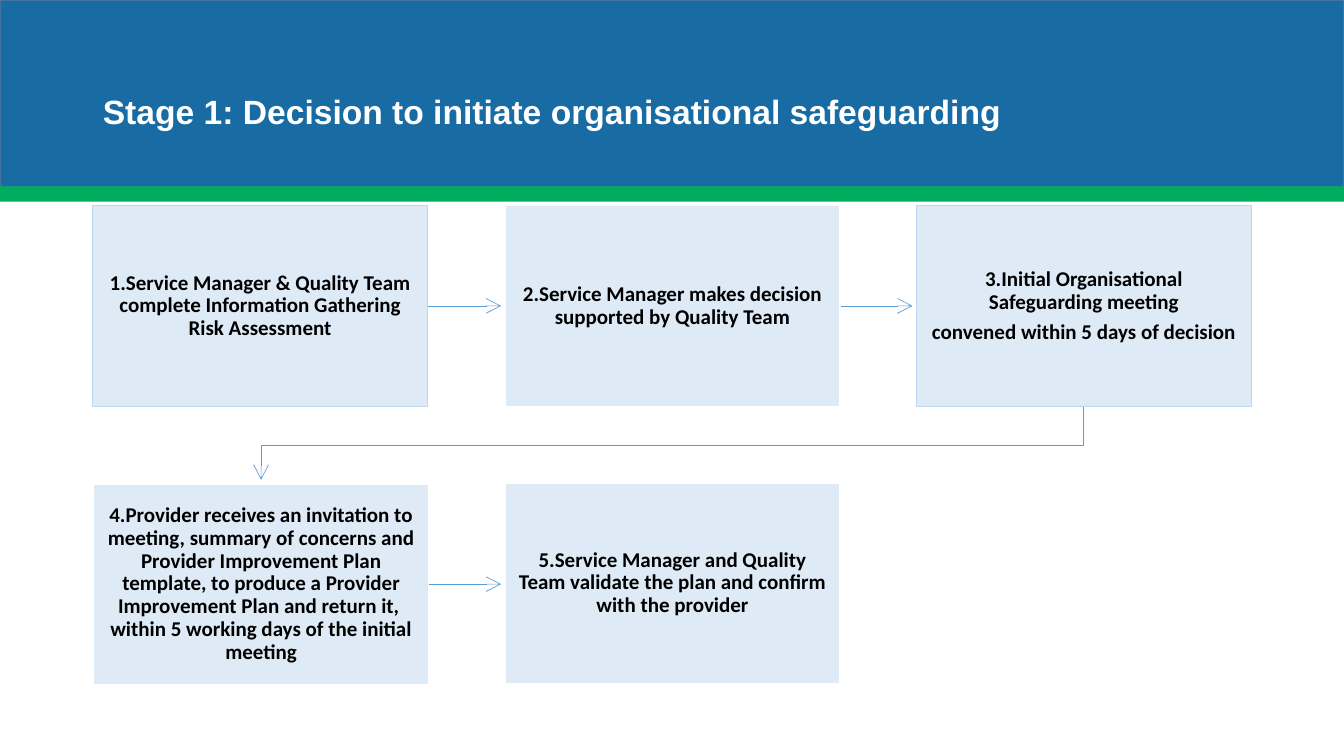
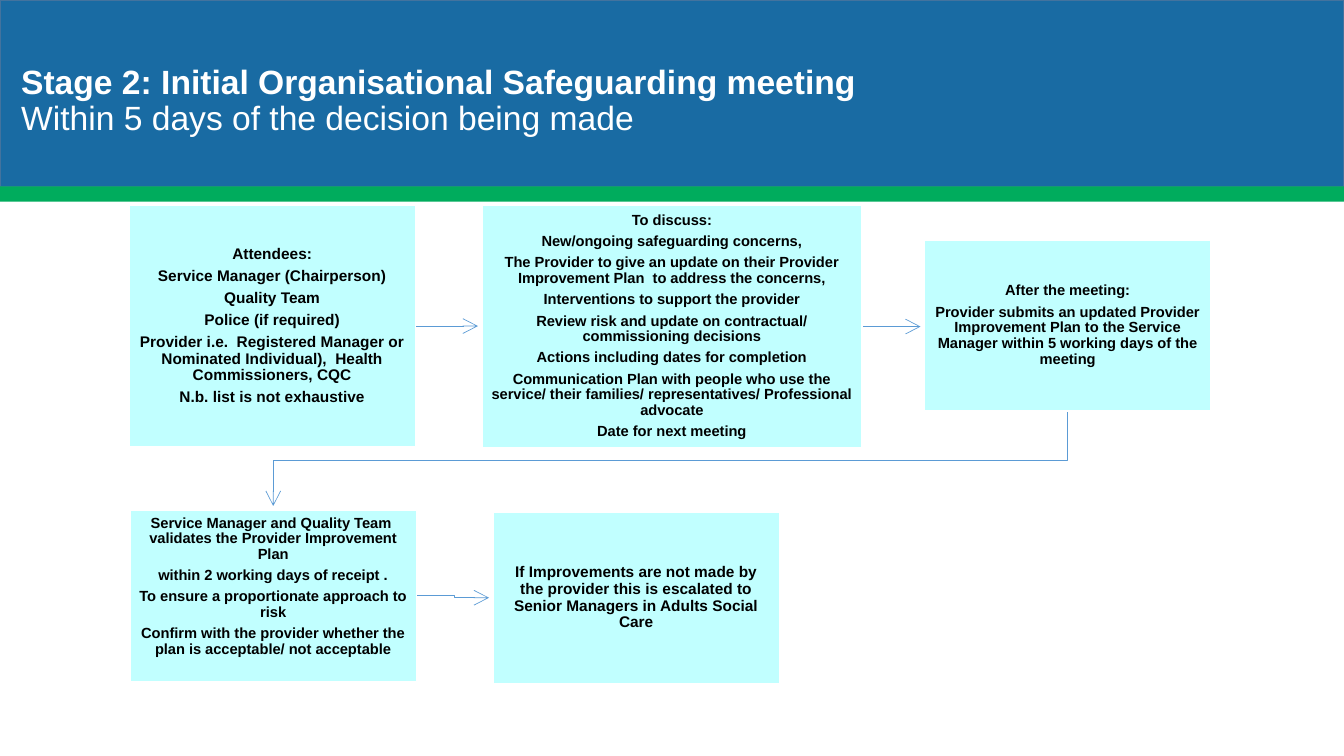
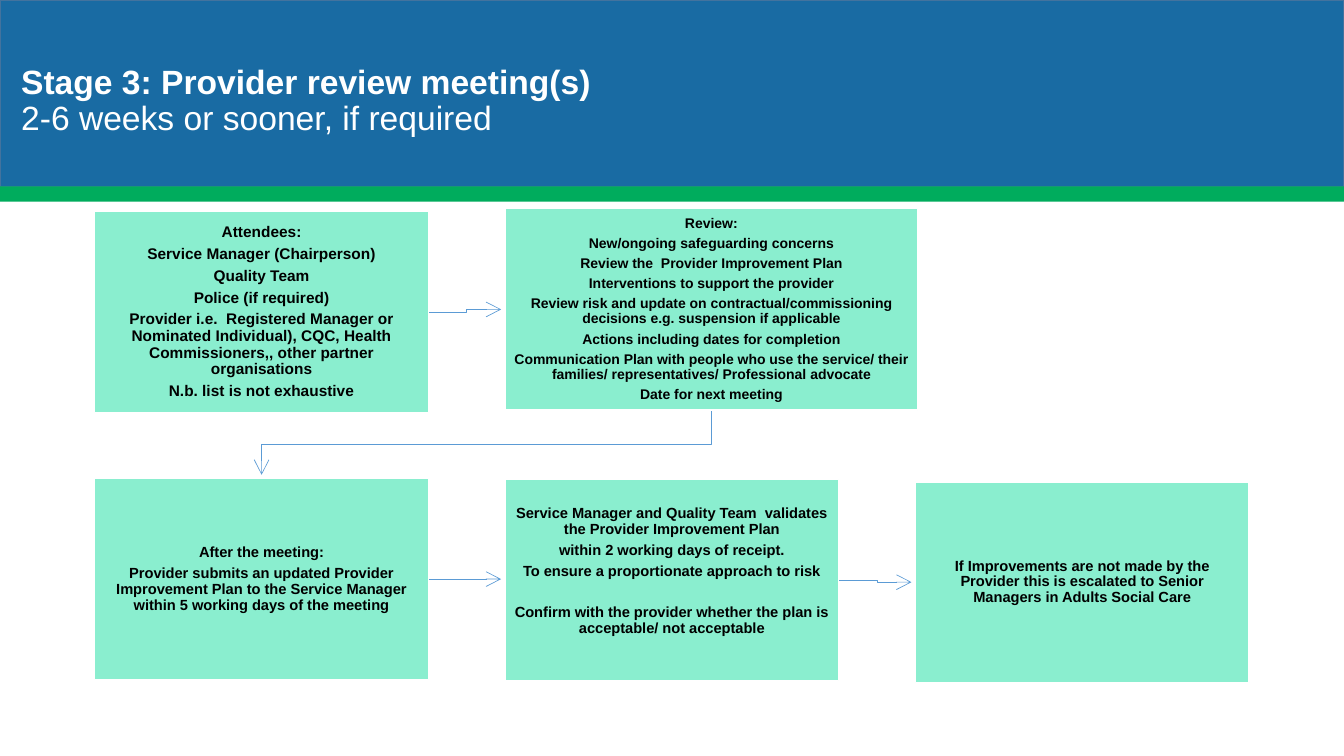
from dataclasses import dataclass
from itertools import pairwise

from lxml import etree
from pptx import Presentation
from pptx.dml.color import RGBColor
from pptx.enum import shapes, text
from pptx.oxml import ns
from pptx.util import Inches, Pt

WHITE = "FFFFFF"
BLACK = "000000"
BAND_BLUE = "196BA3"
BAND_EDGE = "43739E"
BAND_GREEN = "00AC5D"
ARROW_BLUE = "5B9BD5"
PALE_BLUE = "DEEBF7"
PALE_BLUE_EDGE = "BDD7EE"
CYAN = "C1FFFF"
MINT = "8AEECF"

ARROW_GAP = 0.04
LEVEL_TOLERANCE = 0.015

AFTER_MEETING = (
    "After the meeting:",
    "Provider submits an updated Provider Improvement Plan to the Service Manager "
    "within 5 working days of the meeting",
)
ATTENDEES = (
    "Attendees:",
    "Service Manager (Chairperson)",
    "Quality Team",
    "Police (if required)",
)
NOT_EXHAUSTIVE = "N.b. list is not exhaustive"
VALIDATES = "Service Manager and Quality Team  validates the Provider Improvement Plan"
PROPORTIONATE = "To ensure a proportionate approach to risk"
CONFIRM = "Confirm with the provider whether the plan is acceptable/ not acceptable"
SUPPORT = "Interventions to support the provider"
CLOSING_AGENDA = (
    "Actions including dates for completion",
    "Communication Plan with people who use the service/ their families/ "
    "representatives/ Professional advocate",
    "Date for next meeting",
)


@dataclass(frozen=True)
class Step:
    left: float
    top: float
    width: float
    height: float
    lines: tuple[str, ...]
    size: float
    edge: str = WHITE
    extra_bottom: float = 0
    gap_before_last: float = 0

    @property
    def right(self) -> float:
        return self.left + self.width

    @property
    def bottom(self) -> float:
        return self.top + self.height

    @property
    def center(self) -> tuple[float, float]:
        return self.left + self.width / 2, self.top + self.height / 2


@dataclass(frozen=True)
class Stage:
    title: str
    title_area: tuple[float, float, float, float]
    fill: str
    font: str
    inset: float
    steps: tuple[Step, ...]


SUBTITLED_AREA = (0.11, 0.17, 11.79, 1.68)

STAGES = (
    Stage(
        "Stage 1: Decision to initiate organisational safeguarding",
        (0.92, 0.4, 10.98, 1.45), PALE_BLUE, "Calibri", 0.12,
        (
            Step(0.92, 2.04, 3.32, 1.99, (
                "1.Service Manager & Quality Team complete Information Gathering "
                "Risk Assessment",
            ), 15, PALE_BLUE_EDGE),
            Step(5.01, 2.04, 3.32, 1.99, (
                "2.Service Manager makes decision supported by Quality Team",
            ), 15),
            Step(9.09, 2.04, 3.32, 1.99, (
                "3.Initial Organisational Safeguarding meeting",
                "convened within 5 days of decision",
            ), 15, PALE_BLUE_EDGE),
            Step(0.93, 4.8, 3.32, 1.99, (
                "4.Provider receives an invitation to meeting, summary of concerns and "
                "Provider Improvement Plan template, to produce a Provider Improvement "
                "Plan and return it,  within 5 working days of the initial meeting",
            ), 15),
            Step(5.01, 4.79, 3.32, 1.99, (
                "5.Service Manager and Quality Team validate the plan and confirm "
                "with the provider",
            ), 15),
        ),
    ),
    Stage(
        "Stage 2: Initial Organisational Safeguarding meeting \v"
        "Within 5 days of the decision being made",
        SUBTITLED_AREA, CYAN, "Arial", 0.09,
        (
            Step(1.28, 2.04, 2.84, 2.39, (
                *ATTENDEES,
                "Provider i.e.  Registered Manager or Nominated Individual),  Health "
                "Commissioners, CQC",
                NOT_EXHAUSTIVE,
            ), 11),
            Step(4.78, 2.04, 3.77, 2.4, (
                "To discuss:",
                "New/ongoing safeguarding concerns,",
                "The Provider to give an update on their Provider Improvement Plan  "
                "to address the concerns,",
                SUPPORT,
                "Review risk and update on contractual/ commissioning decisions",
                *CLOSING_AGENDA,
            ), 10.5),
            Step(9.17, 2.38, 2.84, 1.7, AFTER_MEETING, 10.5),
            Step(1.29, 5.06, 2.84, 1.7, (
                VALIDATES, "within 2 working days of receipt .", PROPORTIONATE, CONFIRM,
            ), 10.5, extra_bottom=0.18),
            Step(4.89, 5.08, 2.84, 1.7, (
                "If Improvements are not made by the provider this is escalated to "
                "Senior Managers in Adults Social Care",
            ), 11),
        ),
    ),
    Stage(
        "Stage 3: Provider review meeting(s) \v2-6 weeks or sooner, if required",
        SUBTITLED_AREA, MINT, "Arial", 0.09,
        (
            Step(0.94, 2.1, 3.31, 1.99, (
                *ATTENDEES,
                "Provider i.e.  Registered Manager or Nominated Individual), CQC, "
                "Health Commissioners,, other partner organisations",
                NOT_EXHAUSTIVE,
            ), 11),
            Step(5.01, 2.07, 4.09, 2, (
                "Review:",
                "New/ongoing safeguarding concerns",
                "Review the  Provider Improvement Plan",
                SUPPORT,
                "Review risk and update on contractual/commissioning decisions e.g. "
                "suspension if applicable",
                *CLOSING_AGENDA,
            ), 10),
            Step(0.94, 4.75, 3.31, 1.99, AFTER_MEETING, 10.5),
            Step(5.01, 4.76, 3.31, 1.99, (
                VALIDATES, "within 2 working days of receipt.", PROPORTIONATE, CONFIRM,
            ), 10.5, extra_bottom=0.18, gap_before_last=14.5),
            Step(9.08, 4.78, 3.31, 1.99, (
                "If Improvements are not made by the Provider this is escalated to "
                "Senior Managers in Adults Social Care",
            ), 10.5),
        ),
    ),
)


def color(value: str) -> RGBColor:
    return RGBColor.from_string(value)


def add_box(page, area: tuple[float, ...], fill: str, edge: str | None = None):
    box = page.shapes.add_shape(
        shapes.MSO_SHAPE.RECTANGLE, *(Inches(length) for length in area))
    box.shadow.inherit = False
    box.fill.solid()
    box.fill.fore_color.rgb = color(fill)
    if edge:
        box.line.color.rgb = color(edge)
        box.line.width = Pt(1)
    else:
        box.line.fill.background()
    return box


def add_header(page, stage: Stage) -> None:
    add_box(page, (0, 0, 13.33, 1.85), BAND_BLUE, BAND_EDGE)
    add_box(page, (0, 1.85, 13.33, 0.15), BAND_GREEN)
    title = page.shapes.title
    title.element.getparent().append(title.element)
    title.left, title.top, title.width, title.height = (
        Inches(length) for length in stage.title_area)
    frame = title.text_frame
    frame.text = stage.title
    frame.word_wrap = True
    frame.auto_size = text.MSO_AUTO_SIZE.NONE
    frame.vertical_anchor = text.MSO_ANCHOR.MIDDLE
    para = frame.paragraphs[0]
    para.alignment = text.PP_ALIGN.LEFT
    para.line_spacing = 0.9
    for index, span in enumerate(para.runs):
        span.font.name = "Arial"
        span.font.size = Pt(24)
        span.font.bold = index == 0
        span.font.color.rgb = color(WHITE)


def add_step(page, step: Step, stage: Stage) -> None:
    area = (step.left, step.top, step.width, step.height)
    frame = add_box(page, area, stage.fill, step.edge).text_frame
    frame.text = "\n".join(step.lines)
    frame.word_wrap = True
    frame.vertical_anchor = text.MSO_ANCHOR.MIDDLE
    frame.margin_left = frame.margin_right = frame.margin_top = Inches(stage.inset)
    frame.margin_bottom = Inches(stage.inset + step.extra_bottom)
    for para in frame.paragraphs:
        para.alignment = text.PP_ALIGN.CENTER
        para.line_spacing = 0.9
        para.space_after = Pt(round(step.size * 0.35, 1))
        for span in para.runs:
            span.font.name = stage.font
            span.font.size = Pt(step.size)
            span.font.bold = True
            span.font.color.rgb = color(BLACK)
    if step.gap_before_last:
        frame.paragraphs[-1].space_before = Pt(step.gap_before_last)


def arrow_route(start: Step, end: Step) -> list[tuple[float, float]]:
    (start_x, start_y), (end_x, end_y) = start.center, end.center
    if end.left < start.left:
        turn = (start.bottom + end.top) / 2
        return [(start_x, start.bottom), (start_x, turn),
                (end_x, turn), (end_x, end.top - ARROW_GAP)]
    tip = end.left - ARROW_GAP
    if abs(end_y - start_y) < LEVEL_TOLERANCE:
        return [(start.right, start_y), (tip, start_y)]
    turn = (start.right + end.left) / 2
    return [(start.right, start_y), (turn, start_y), (turn, end_y), (tip, end_y)]


def add_arrow(page, start: Step, end: Step) -> None:
    points = [(Inches(x), Inches(y)) for x, y in arrow_route(start, end)]
    if len(points) == 2:
        arrow = page.shapes.add_connector(
            shapes.MSO_CONNECTOR.STRAIGHT, *points[0], *points[1])
        etree.SubElement(arrow.element.spPr, ns.qn("a:effectLst"))
    else:
        outline = page.shapes.build_freeform(*points[0])
        outline.add_line_segments(points[1:], close=False)
        arrow = outline.convert_to_shape()
        arrow.shadow.inherit = False
        arrow.fill.background()
    arrow.line.color.rgb = color(ARROW_BLUE)
    arrow.line.width = Pt(0.5)
    line = arrow.line._get_or_add_ln()
    etree.SubElement(line, ns.qn("a:tailEnd"), type="arrow", w="lg", len="lg")


def main() -> None:
    deck = Presentation()
    deck.slide_width = Inches(13.33)
    deck.slide_height = Inches(7.5)
    for stage in STAGES:
        page = deck.slides.add_slide(deck.slide_layouts[5])
        add_header(page, stage)
        for start, end in pairwise(stage.steps):
            add_arrow(page, start, end)
        for step in stage.steps:
            add_step(page, step, stage)
    deck.save("out.pptx")


if __name__ == "__main__":
    main()
